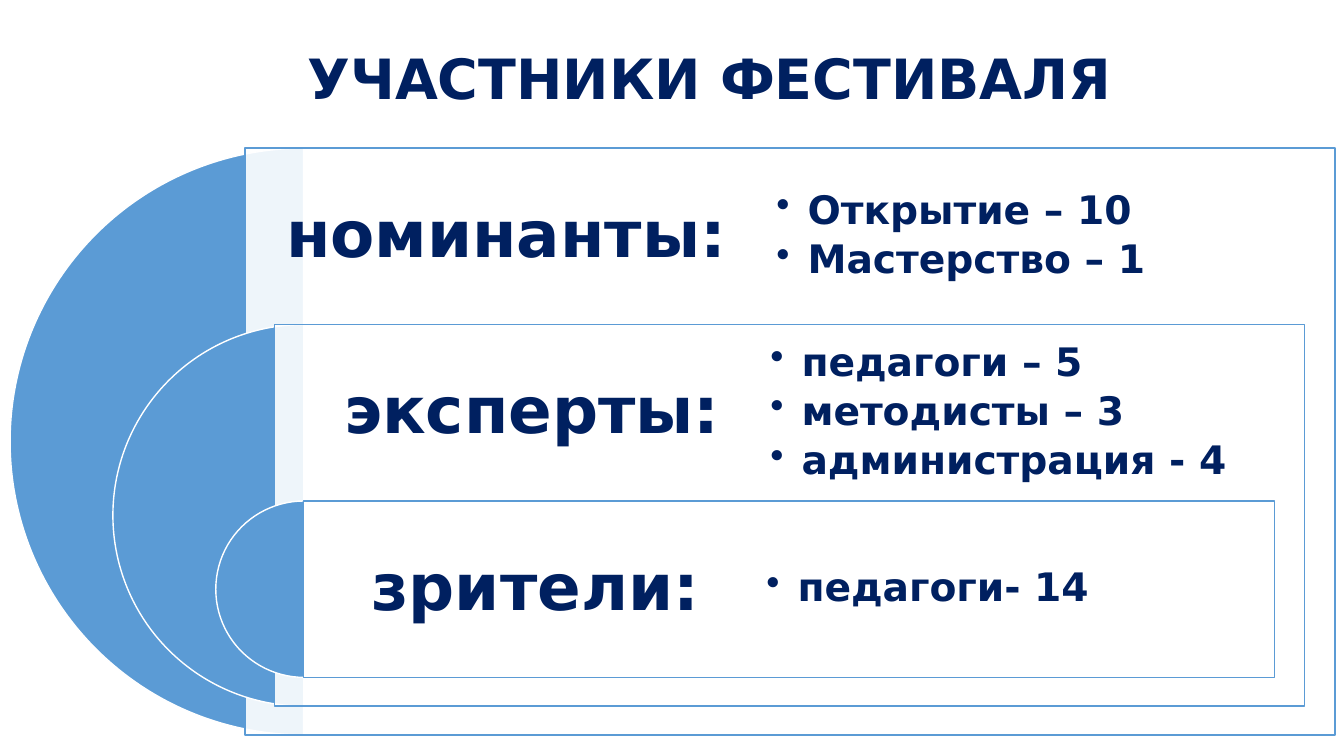
from lxml import etree
from pptx import Presentation
from pptx.dml.color import RGBColor
from pptx.enum.shapes import MSO_SHAPE
from pptx.enum.text import MSO_ANCHOR, MSO_AUTO_SIZE, PP_ALIGN
from pptx.oxml.ns import qn
from pptx.util import Inches, Pt

PIE, RECT = MSO_SHAPE.PIE, MSO_SHAPE.RECTANGLE
MIDDLE = MSO_ANCHOR.MIDDLE
NO_FIT = MSO_AUTO_SIZE.NONE
CENTER = PP_ALIGN.CENTER
COLORS = {"navy": "002060", "blue": "5B9BD5", "white": "FFFFFF"}
TITLE = "УЧАСТНИКИ ФЕСТИВАЛЯ"
ROWS = [
    ("номинанты: ", 5.32, ["Открытие – 10", "Мастерство – 1"]),
    ("эксперты:", 5.44, ["педагоги – 5", "методисты – 3", "администрация - 4"]),
    ("зрители: ", 5.52, ["педагоги- 14"]),
]
TOP, STEP = 1.47, 1.75
SHRINK = (5.82 - STEP) / 2
INDENT = 0.31


def adjust(target, values):
    for name, value in values.items():
        setattr(target, name, value)


class Board:
    """Holds the text style and the current slide, and draws its elements."""

    def __init__(self, slide):
        self.slide = slide
        self.font = {"name": "DejaVu Sans", "bold": True}

    def paint(self, target, color):
        target.rgb = RGBColor.from_string(COLORS[color])

    def fill_text(self, frame, lines, size, pad, para, bullet=False):
        adjust(frame, {"word_wrap": True, "auto_size": NO_FIT, "vertical_anchor": MIDDLE})
        for side in ("left", "right", "top", "bottom"):
            setattr(frame, f"margin_{side}", Inches(pad))
        for index, line in enumerate(lines):
            item = frame.add_paragraph() if index else frame.paragraphs[0]
            item.text = line
            adjust(item, para)
            if bullet:
                props = item._p.get_or_add_pPr()
                props.set("marL", str(Inches(INDENT)))
                props.set("indent", str(-Inches(INDENT)))
                etree.SubElement(props, qn("a:buChar")).set("char", "•")
            font = item.runs[0].font
            adjust(font, {**self.font, "size": Pt(size)})
            self.paint(font.color, "navy")

    def title(self, text, box):
        shape = self.slide.shapes.title
        adjust(shape, dict(zip(("left", "top", "width", "height"), map(Inches, box))))
        self.fill_text(shape.text_frame, [text], 39.6, 0.05, {"alignment": CENTER})
        shape.text_frame.margin_right = Inches(0.71)

    def shape(self, kind, box, fill, line, opacity=100):
        shape = self.slide.shapes.add_shape(kind, *map(Inches, box))
        shape.shadow.inherit = False
        shape.fill.solid()
        self.paint(shape.fill.fore_color, fill)
        self.paint(shape.line.color, line)
        shape.line.width = Pt(1)
        if opacity < 100:
            tint = shape.element.spPr.find(qn("a:solidFill"))[0]
            etree.SubElement(tint, qn("a:alpha")).set("val", str(opacity * 1000))
        return shape

    def half(self, box):
        pie = self.shape(PIE, box, "blue", "white")
        pie.adjustments[0], pie.adjustments[1] = 54, 162

    def label(self, text, box):
        frame = self.slide.shapes.add_textbox(*map(Inches, box)).text_frame
        self.fill_text(frame, [text], 46, 0.19, {"alignment": CENTER, "line_spacing": 0.9})

    def points(self, lines, box):
        frame = self.slide.shapes.add_textbox(*map(Inches, box)).text_frame
        para = {"level": 1, "line_spacing": 0.9, "space_after": Pt(5)}
        self.fill_text(frame, lines, 28, 0.12, para, bullet=True)


def main():
    deck = Presentation()
    adjust(deck, {"slide_width": Inches(13.33), "slide_height": Inches(7.5)})
    board = Board(deck.slides.add_slide(deck.slide_layouts[5]))
    board.title(TITLE, (2, 0.28, 10.74, 0.98))
    for index, (name, wide, lines) in enumerate(ROWS):
        top = TOP + STEP * index
        size = 5.82 - SHRINK * index
        left = 2.43 + 0.29 * index
        right = 13.24 - 0.3 * index
        board.half((0.1 + 1.02 * index, top, size, size))
        board.shape(RECT, (left, top, right - left, size), "white", "blue", 90)
        board.label(name, (left, top, 7.83 - left, STEP))
        board.points(lines, (10.24 - wide / 2, top, wide, STEP))
    deck.save("out.pptx")


if __name__ == "__main__":
    main()
